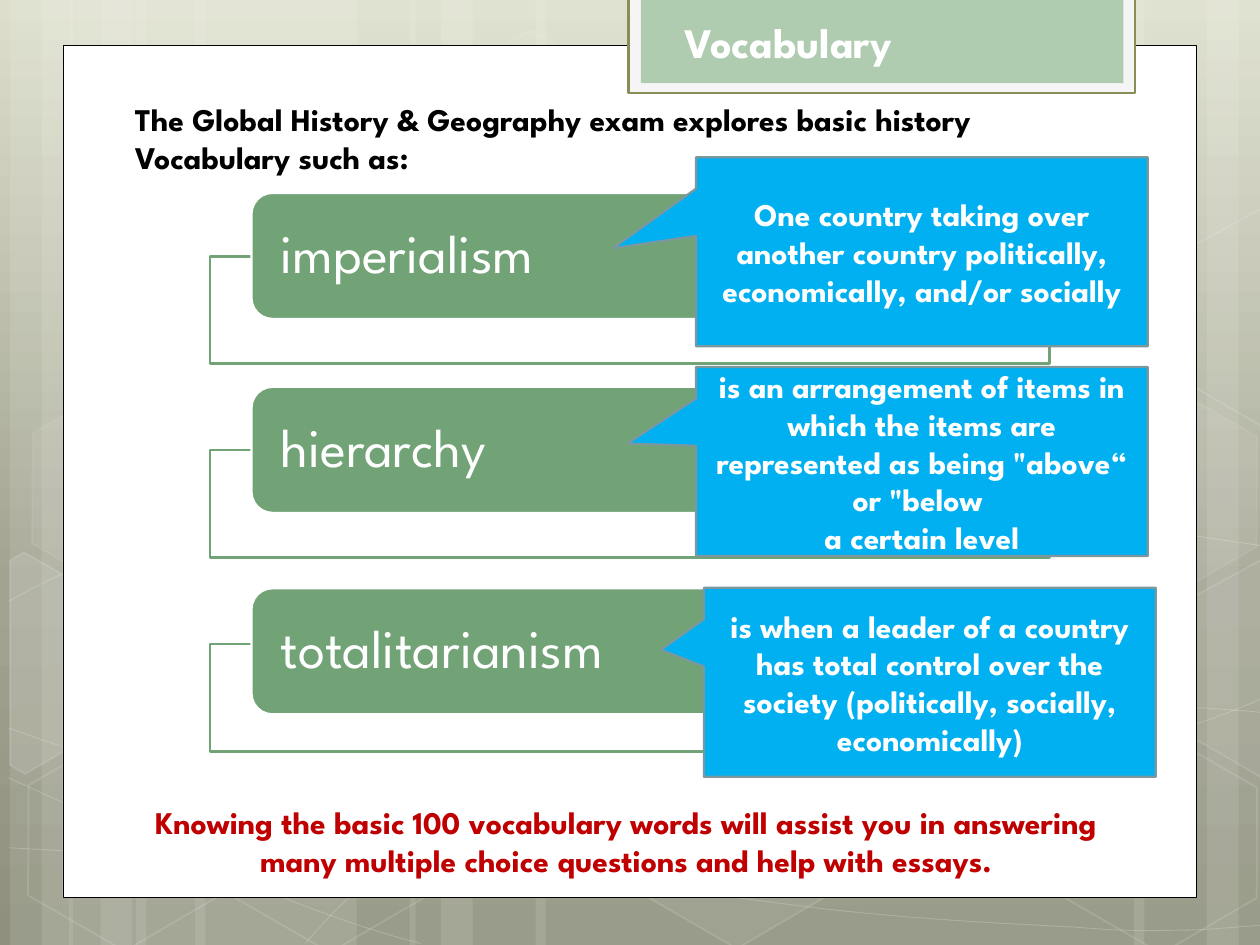
from copy import deepcopy
from math import cos, radians, sin

from lxml import etree
from pptx import Presentation
from pptx.dml.color import RGBColor
from pptx.enum.shapes import MSO_SHAPE
from pptx.enum.text import MSO_ANCHOR, PP_ALIGN
from pptx.oxml.ns import qn
from pptx.util import Cm, Pt

RECT, PILL = MSO_SHAPE.RECTANGLE, MSO_SHAPE.ROUNDED_RECTANGLE
HEXAGON, CALLOUT = MSO_SHAPE.HEXAGON, MSO_SHAPE.RECTANGULAR_CALLOUT
LEFT, CENTER = PP_ALIGN.LEFT, PP_ALIGN.CENTER
TOP, MIDDLE = MSO_ANCHOR.TOP, MSO_ANCHOR.MIDDLE

FONT = "League Spartan"
WHITE, GREEN, BLUE = "FFFFFF", "72A376", "00B0F0"
TILT = 30
GRADIENT = [(0, "DDDFCC"), (0.62, "A2A391"), (1, "8F917E")]

BARS = [(x + shift, w) for shift in (0, 1.19)
        for x, w in ((2.74, 4.45), (0.2, 1.27), (0.84, 2.11))]
BARS += [(18.62, 4.45), (24.33, 1.27), (22.86, 2.11),
         (10.8, 7.82), (8.26, 1.27), (8.89, 2.11)]

HEXAGONS = [(8.48, 0.91, 4, 8), (12.62, 14.96, 6, 12), (0.28, 15.01, None, 12),
            (0.36, 7.92, 7, 8), (4.42, 15.04, None, 12), (19.13, 11.51, 10, 12),
            (21.18, 15.06, None, 12), (21.18, 7.98, 7, 8)]

LEFT_EDGE = [(0.2, 11.3), (0.48, 11.13), (2.44, 12.24),
             (2.41, 14.48), (0.51, 15.6), (0.2, 15.42)]
RIGHT_EDGE = [(23.52, 12.32), (25.43, 11.28), (25.63, 11.33),
              (25.63, 15.57), (25.45, 15.67), (23.52, 14.55)]
UPPER_EDGE = [(x, y - 7.08) for x, y in RIGHT_EDGE]
CUT_HEXAGONS = [(LEFT_EDGE, (0.91, 13.59), 10), (RIGHT_EDGE, (25.02, 13.21), 4),
                (UPPER_EDGE, (25.02, 6.12), None)]

WAVES = [
    [(0.18, 17.09), (1.55, 17.17), (2.92, 17.25), (4.83, 17.22), (6.73, 17.2),
     (9.09, 17.15), (11.63, 16.89), (14.17, 16.64), (17.78, 16.15),
     (20.12, 15.67), (22.43, 15.19), (24.82, 14.43), (25.58, 14)],
    [(0.18, 12.12), (0.91, 11.71), (1.65, 11.33), (3.07, 10.95), (4.52, 10.57),
     (6.58, 10.01), (8.81, 9.83), (11.07, 9.65), (13.82, 9.63),
     (16.61, 9.83), (19.41, 10.03), (24.05, 10.82), (25.58, 11.02)],
    [(0.15, 15.67), (3.23, 17.07), (6.27, 18.47), (8.48, 19.02)],
    [(0.18, 14.68), (0.97, 14.96), (1.78, 15.24), (3.25, 15.65), (4.72, 16.03),
     (6.93, 16.66), (9.07, 17.09), (11.18, 17.53), (13.84, 17.98),
     (15.95, 18.24), (18.06, 18.52), (20.32, 18.62), (21.67, 18.69),
     (22.99, 18.8), (23.34, 18.75), (24, 18.75), (24.66, 18.72),
     (25.12, 18.67), (25.58, 18.64)],
    [(6.15, 19.02), (6.6, 18.52), (7.06, 18.01), (7.67, 17.55), (8.28, 17.09),
     (9.14, 16.59), (9.86, 16.23), (10.57, 15.88), (11, 15.72), (11.94, 15.47),
     (12.85, 15.22), (14.55, 14.86), (15.44, 14.68), (16.36, 14.5),
     (16.48, 14.5), (17.27, 14.45), (18.06, 14.38), (19.3, 14.3),
     (20.17, 14.27), (21.06, 14.25), (22.5, 14.27), (22.5, 14.27),
     (22.5, 14.27), (24.21, 14.27), (24.21, 14.27), (24.66, 14.3),
     (25.1, 14.33), (25.32, 14.35), (25.48, 14.38), (25.4, 14.35), (25.55, 14.38)],
]

TERMS = [("imperialism", 3.89), ("hierarchy", 7.8), ("totalitarianism", 11.86)]
MEANINGS = [
    ("One country taking over another country politically, economically, "
     "and/or socially", 14.03, 3.17, -0.684, -0.018),
    ('is an arrangement of items in which the items are represented as being '
     '"above“ or "below \na certain level', 14.03, 7.4, -0.652, -0.095),
    ("is when a leader of a country has total control over the society "
     "(politically, socially, economically)", 14.19, 11.85, -0.595, -0.172),
]


def rgb(color):
    """Return the colour object for a hex string."""
    return RGBColor.from_string(color)


def fade(parent, percent):
    """Set the opacity of the solid fill directly under an element."""
    clr = parent.find(qn("a:solidFill")).find(qn("a:srgbClr"))
    etree.SubElement(clr, qn("a:alpha")).set("val", str(percent * 1000))


def style(sp, fill=None, line=None, width=1.25, alpha=None, line_alpha=None):
    """Set fill, outline and opacity of a shape and drop its shadow."""
    sp.shadow.inherit = False
    if fill:
        sp.fill.solid()
        sp.fill.fore_color.rgb = rgb(fill)
    else:
        sp.fill.background()
    if line:
        sp.line.color.rgb = rgb(line)
        sp.line.width = Pt(width)
    else:
        sp.line.fill.background()
    props = sp._element.spPr
    if fill and alpha:
        fade(props, alpha)
    if line and line_alpha:
        fade(props.find(qn("a:ln")), line_alpha)


def add_shape(s, kind, box, **look):
    """Add a styled preset shape in a box given in centimetres."""
    sp = s.shapes.add_shape(kind, *map(Cm, box))
    style(sp, **look)
    return sp


def add_outline(s, points, close, **look):
    """Add a styled freeform through points given in centimetres."""
    (x, y), *rest = [(Cm(px), Cm(py)) for px, py in points]
    builder = s.shapes.build_freeform(x, y)
    builder.add_line_segments(rest, close=close)
    sp = builder.convert_to_shape()
    style(sp, **look)
    return sp


def bend(sp):
    """Turn each three line segments of a freeform into one cubic curve."""
    lines = list(sp._element.iter(qn("a:lnTo")))
    for first, second, third in zip(lines[::3], lines[1::3], lines[2::3]):
        first.tag = qn("a:cubicBezTo")
        for extra in (second, third):
            first.append(extra[0])
            extra.getparent().remove(extra)


def turn_back(points, center):
    """Turn points against the tilt around a center."""
    cx, cy = center
    c, d = cos(radians(TILT)), sin(radians(TILT))
    return [(cx + (x - cx) * c + (y - cy) * d, cy - (x - cx) * d + (y - cy) * c)
            for x, y in points]


def write(sp, paragraphs, size, color, bold=True, align=LEFT, anchor=TOP):
    """Write paragraphs into a shape, breaking lines at newlines."""
    tf = sp.text_frame
    tf.word_wrap = True
    tf.vertical_anchor = anchor
    for i, text in enumerate(paragraphs):
        p = tf.add_paragraph() if i else tf.paragraphs[0]
        p.alignment = align
        for j, part in enumerate(text.split("\n")):
            if j:
                p.add_line_break()
            r = p.add_run()
            r.text = part
            r.font.name, r.font.size, r.font.bold = FONT, Pt(size), bold
            r.font.color.rgb = rgb(color)
    return tf


def backdrop(s, x, y, h):
    """Draw the gradient, bars, waves and hexagons behind the page."""
    fill = s.background.fill
    fill.gradient()
    fill.gradient_angle = 270
    stops = next(s._element.iter(qn("a:gsLst")))
    stops.insert(1, deepcopy(stops[0]))
    for stop, (position, color) in zip(fill.gradient_stops, GRADIENT):
        stop.position = position
        stop.color.rgb = rgb(color)
    for dx, w in BARS:
        add_shape(s, RECT, (x + dx, y, w, h), fill=WHITE, alpha=10)
    for wave in WAVES:
        points = [(x + px, y + py) for px, py in wave]
        bend(add_outline(s, points, False, line=WHITE, width=0.5, line_alpha=20))
    for dx, dy, alpha, line_alpha in HEXAGONS:
        sp = add_shape(s, HEXAGON, (x + dx, y + dy, 4.45, 3.86), fill=alpha and WHITE,
                       alpha=alpha, line=WHITE, width=1, line_alpha=line_alpha)
        sp.adjustments[0] = 0.285
        sp.rotation = TILT
    for corners, center, alpha in CUT_HEXAGONS:
        points = [(x + px, y + py) for px, py in turn_back(corners, center)]
        sp = add_outline(s, points, True, fill=alpha and WHITE, alpha=alpha,
                         line=WHITE, width=1, line_alpha=12)
        sp.rotation = TILT


def page(s, x, y, w, h):
    """Draw the white page with its tab, introduction and closing line."""
    add_shape(s, RECT, (x, y, w, h), fill=WHITE, line="000000", width=0.5)
    add_shape(s, RECT, (x + 11.4, y - 0.96, 10.21, 1.93), fill="F5F5F5", line="8A8E56")
    add_shape(s, RECT, (x + 11.65, y - 0.96, 9.73, 1.73), fill="B0CCB0")
    texts = [
        ((12.28, -0.71, 5.38, 1.27), ["Vocabulary"], 24, WHITE, LEFT),
        ((1.2, 0.99, 19.51, 1.8),
         ["The Global History & Geography exam explores basic history",
          "Vocabulary such as:"], 18, "000000", LEFT),
        ((0.84, 15.16, 21.03, 1.8),
         ["Knowing the basic 100 vocabulary words will assist you in answering "
          "many multiple choice questions and help with essays."], 18, "C00000", CENTER),
    ]
    for (dx, dy, tw, th), paragraphs, size, color, align in texts:
        sp = s.shapes.add_textbox(Cm(x + dx), Cm(y + dy), Cm(tw), Cm(th))
        write(sp, paragraphs, size, color, align=align)


def term_list(s, x, y, w):
    """Draw each term as a pill over an outlined tray."""
    for i, (term, top) in enumerate(TERMS):
        add_shape(s, RECT, (x, y + 3.91 * i, w, 2.16), fill=WHITE, alpha=90, line=GREEN)
        sp = add_shape(s, PILL, (x + 0.84, top, 0.7 * w, 2.54), fill=GREEN, line=WHITE)
        tf = write(sp, [term], 31, WHITE, bold=False, anchor=MIDDLE)
        tf.margin_left = tf.margin_right = Cm(0.46)
        tf.margin_top = tf.margin_bottom = 0
        tf.paragraphs[0].line_spacing = 0.9


def meaning(s, x, y, w, h, text, tip):
    """Draw one callout that points at its term."""
    sp = add_shape(s, CALLOUT, (x, y, w, h), fill=BLUE, line="7C989F")
    sp.adjustments[0], sp.adjustments[1] = tip
    write(sp, [text], 18, WHITE, align=CENTER, anchor=MIDDLE)


def main():
    """Build and save the vocabulary slide."""
    prs = Presentation()
    prs.slide_width, prs.slide_height = Cm(25.4), Cm(19.05)
    s = prs.slides.add_slide(prs.slide_layouts[6])
    backdrop(s, 0, 0, 19.05)
    page(s, 1.27, 0.91, 22.86, 17.19)
    term_list(s, 4.23, 5.17, 16.93)
    for text, x, y, *tip in MEANINGS:
        meaning(s, x, y, 9.11, 3.81, text, tip)
    prs.save("out.pptx")


if __name__ == "__main__":
    main()
